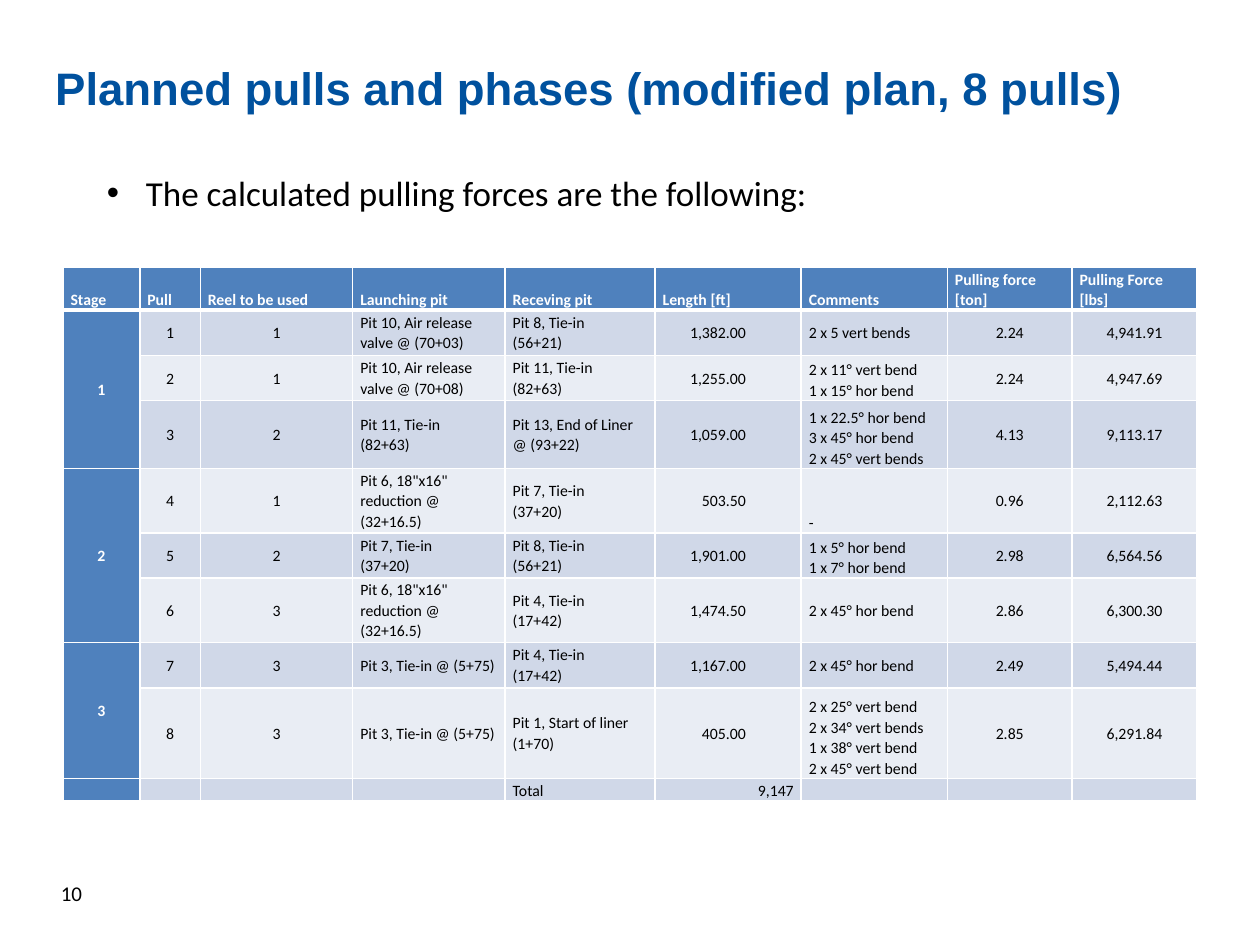
from dataclasses import dataclass

import lxml.etree
import pptx
import pptx.dml.color
import pptx.enum.text
import pptx.oxml.ns
import pptx.util

Inches = pptx.util.Inches
Pt = pptx.util.Pt
ALIGN = pptx.enum.text.PP_ALIGN
ANCHOR = pptx.enum.text.MSO_ANCHOR
qn = pptx.oxml.ns.qn


@dataclass(frozen=True)
class Theme:
    title_font: str = "Arial"
    body_font: str = "Calibri"
    title_color: str = "00519E"
    text_color: str = "000000"
    white: str = "FFFFFF"
    accent: str = "4F81BD"
    band_dark: str = "D0D8E8"
    band_light: str = "E9EDF4"
    title_size: int = 26
    body_size: int = 20
    number_size: int = 12
    table_size: int = 9


THEME = Theme()

COLUMN_WIDTHS = [0.61, 0.48, 1.21, 1.21, 1.19, 1.16, 1.16, 0.99, 0.99]
ROW_HEIGHTS = [0.34, 0.36, 0.36, 0.54, 0.51, 0.36, 0.51, 0.36, 0.72, 0.18]
LENGTH_COLUMN, COMMENT_COLUMN = 5, 6
CENTERED_COLUMNS = {0, 1, 2, 7, 8}
STAGE_SPANS = [(1, 3), (4, 6), (7, 8)]  # first and last row of each stage
BOTTOM_COMMENT_ROWS = {2, 3, 4, 5, 8}

ROWS = [
    ["Stage", "Pull", "Reel to be used", "Launching pit", "Receving pit",
     "Length [ft]", "Comments", "Pulling force [ton]", "Pulling Force [lbs]"],
    ["1", "1", "1", "Pit 10, Air release valve @ (70+03)", "Pit 8, Tie-in\n(56+21)",
     "1,382.00", "2 x 5 vert bends", "2.24", "4,941.91"],
    ["", "2", "1", "Pit 10, Air release valve @ (70+08)", "Pit 11, Tie-in\n(82+63)",
     "1,255.00", "2 x 11° vert bend\n1 x 15° hor bend", "2.24", "4,947.69"],
    ["", "3", "2", "Pit 11, Tie-in\n(82+63)", "Pit 13, End of Liner @ (93+22)",
     "1,059.00", "1 x 22.5° hor bend\n3 x 45° hor bend\n2 x 45° vert bends",
     "4.13", "9,113.17"],
    ["2", "4", "1", 'Pit 6, 18"x16" reduction @ (32+16.5)', "Pit 7, Tie-in\n(37+20)",
     "503.50", "-", "0.96", "2,112.63"],
    ["", "5", "2", "Pit 7, Tie-in\n(37+20)", "Pit 8, Tie-in\n(56+21)",
     "1,901.00", "1 x 5° hor bend\n1 x 7° hor bend", "2.98", "6,564.56"],
    ["", "6", "3", 'Pit 6, 18"x16" reduction @ (32+16.5)', "Pit 4, Tie-in\n(17+42)",
     "1,474.50", "2 x 45° hor bend", "2.86", "6,300.30"],
    ["3", "7", "3", "Pit 3, Tie-in @ (5+75)", "Pit 4, Tie-in\n(17+42)",
     "1,167.00", "2 x 45° hor bend", "2.49", "5,494.44"],
    ["", "8", "3", "Pit 3, Tie-in @ (5+75)", "Pit 1, Start of liner\n(1+70)",
     "405.00",
     "2 x 25° vert bend\n2 x 34° vert bends\n1 x 38° vert bend\n2 x 45° vert bend",
     "2.85", "6,291.84"],
    ["", "", "", "", "Total", "9,147", "", "", ""],
]


def rgb(color):
    return pptx.dml.color.RGBColor.from_string(color)


def style_font(paragraph, name, size, color, bold=False):
    font = paragraph.font
    font.name, font.size, font.bold = name, Pt(size), bold
    font.color.rgb = rgb(color)


def add_text(slide, box, text):
    shape = slide.shapes.add_textbox(*map(Inches, box))
    frame = shape.text_frame
    frame.word_wrap = True
    frame.text = text
    return frame, frame.paragraphs[0]


def add_title(slide, box):
    frame, paragraph = add_text(
        slide, box, "Planned pulls and phases (modified plan, 8 pulls)")
    frame.margin_top = Inches(0.09)
    style_font(paragraph, THEME.title_font, THEME.title_size, THEME.title_color, True)


def add_lead(slide, box):
    _, paragraph = add_text(
        slide, box, "The calculated pulling forces are the following:")
    properties = paragraph._p.get_or_add_pPr()
    properties.set("marL", str(Inches(0.31)))
    properties.set("indent", str(-Inches(0.31)))
    lxml.etree.SubElement(properties, qn("a:buFont"), typeface="Arial")
    lxml.etree.SubElement(properties, qn("a:buChar"), char="•")
    style_font(paragraph, THEME.body_font, THEME.body_size, THEME.text_color)


def add_slide_number(slide, box):
    frame, paragraph = add_text(slide, box, "10")
    frame.vertical_anchor = ANCHOR.MIDDLE
    paragraph.alignment = ALIGN.RIGHT
    style_font(paragraph, THEME.body_font, THEME.number_size, THEME.text_color)


def set_borders(cell, top, bottom):
    properties = cell._tc.get_or_add_tcPr()
    for side, width in (("L", 1), ("R", 1), ("T", top), ("B", bottom)):
        line = lxml.etree.SubElement(properties, qn("a:ln" + side), w=str(Pt(width)))
        fill = lxml.etree.SubElement(line, qn("a:solidFill"))
        lxml.etree.SubElement(fill, qn("a:srgbClr"), val=THEME.white)


def cell_anchor(row, column):
    is_edge_row = row in (0, len(ROWS) - 1)
    if is_edge_row or (column == COMMENT_COLUMN and row in BOTTOM_COMMENT_ROWS):
        return ANCHOR.BOTTOM
    return ANCHOR.MIDDLE


def cell_alignment(row, column):
    if row == 0:
        return ALIGN.LEFT
    if column == LENGTH_COLUMN:
        return ALIGN.RIGHT
    return ALIGN.CENTER if column in CENTERED_COLUMNS else ALIGN.LEFT


def fill_cell(cell, row, column, text):
    is_heading = row == 0 or column == 0
    set_borders(cell, top=3 if row == 1 else 1, bottom=3 if row == 0 else 1)
    band = THEME.band_dark if row % 2 else THEME.band_light
    cell.fill.solid()
    cell.fill.fore_color.rgb = rgb(THEME.accent if is_heading else band)

    # Pull lengths line up on the right, set in from the cell edge
    is_pull_length = column == LENGTH_COLUMN and 0 < row < len(ROWS) - 1
    cell.margin_left = Inches(0.06)
    cell.margin_right = Inches(0.44 if is_pull_length else 0.06)
    cell.margin_top = cell.margin_bottom = 0
    cell.vertical_anchor = cell_anchor(row, column)

    cell.text = text.replace("\n", "\v")
    paragraph = cell.text_frame.paragraphs[0]
    paragraph.alignment = cell_alignment(row, column)
    paragraph.line_spacing = 1.07
    style_font(paragraph, THEME.body_font, THEME.table_size,
               THEME.white if is_heading else THEME.text_color, is_heading)
    if not text:  # keeps empty rows as low as the text rows
        lxml.etree.SubElement(paragraph._p, qn("a:endParaRPr"),
                              sz=str(THEME.table_size * 100))


def add_pull_table(slide, box):
    table = slide.shapes.add_table(
        len(ROWS), len(COLUMN_WIDTHS), *map(Inches, box)).table
    for column, width in zip(table.columns, COLUMN_WIDTHS):
        column.width = Inches(width)
    for row, height in zip(table.rows, ROW_HEIGHTS):
        row.height = Inches(height)
    for row, texts in enumerate(ROWS):
        for column, text in enumerate(texts):
            fill_cell(table.cell(row, column), row, column, text)
    for first, last in STAGE_SPANS:
        table.cell(first, 0).merge(table.cell(last, 0))


def main():
    presentation = pptx.Presentation()
    presentation.slide_width = Inches(10)
    presentation.slide_height = Inches(7.5)
    slide = presentation.slides.add_slide(presentation.slide_layouts[6])
    add_slide_number(slide, (0.2, 6.89, 0.55, 0.4))
    add_title(slide, (0.34, 0.39, 9, 0.47))
    add_lead(slide, (0.75, 1.31, 8.66, 0.84))
    add_pull_table(slide, (0.5, 2.12, 9, 4.21))
    presentation.save("out.pptx")


if __name__ == "__main__":
    main()
